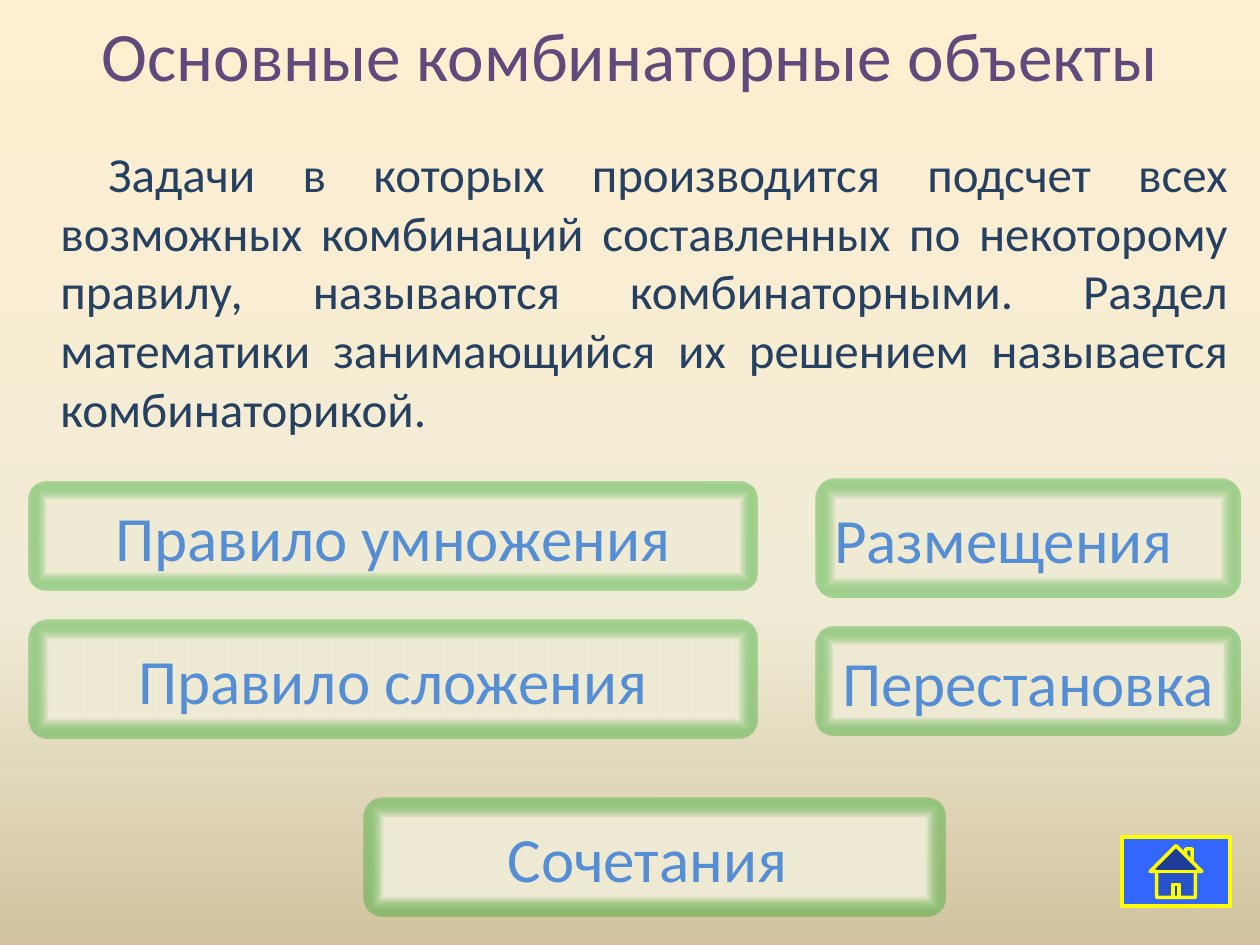
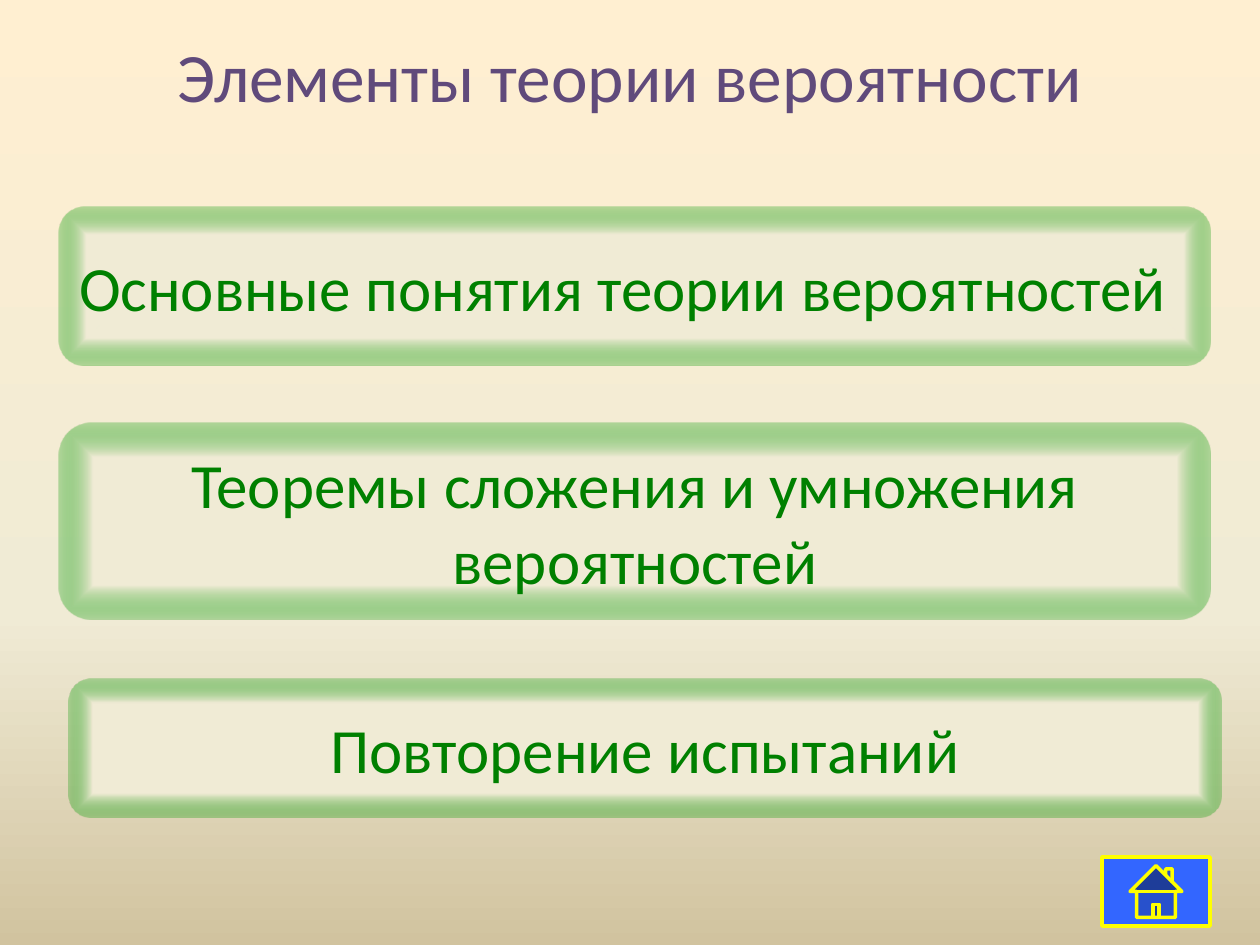
from pptx import Presentation
from pptx.dml.color import RGBColor
from pptx.enum.shapes import MSO_SHAPE
from pptx.enum.text import MSO_ANCHOR, PP_ALIGN
from pptx.oxml import parse_xml
from pptx.oxml.ns import nsdecls
from pptx.util import Emu, Pt

# Shared scale, font and colours
EMU_PER_PX = 914400 / 126
FONT = "Calibri"
TITLE_PURPLE = RGBColor(0x60, 0x4A, 0x7B)
BODY_NAVY = RGBColor(0x25, 0x40, 0x61)
LINK_BLUE = RGBColor(0x55, 0x8E, 0xD5)
LINK_GREEN = RGBColor(0x00, 0x80, 0x00)
HOME_BLUE = RGBColor(0x33, 0x66, 0xFF)
HOME_YELLOW = RGBColor(0xFF, 0xFF, 0x00)
CREAM = RGBColor(0xFF, 0xEF, 0xD1)
IVORY = RGBColor(0xF0, 0xEB, 0xD5)
SAND = RGBColor(0xD1, 0xC3, 0x9F)
RIM_GREEN = RGBColor(0x00, 0x99, 0x00)

# Gradients: (position %, colour, opacity %)
BACKDROP_STOPS = [(0, CREAM, 100), (65, IVORY, 100), (100, SAND, 100)]
BUTTON_STOPS = [(65, IVORY, 100), (100, RIM_GREEN, 27), (100, SAND, 100)]
DOWNWARD = '<a:lin ang="5400000" scaled="0"/>'
FROM_CENTRE = ('<a:path path="shape"><a:fillToRect l="50000" t="50000" '
               'r="50000" b="50000"/></a:path>')


def px(length):
    return Emu(round(length * EMU_PER_PX))


def paint_gradient(fill, element, stops, direction):
    """Replace the fill of an element by a gradient with any number of stops."""
    fill.background()
    empty_fill = element.xpath(".//a:noFill")[0]
    stop_xml = "".join(
        f'<a:gs pos="{position * 1000}"><a:srgbClr val="{colour}">'
        f'<a:alpha val="{opacity * 1000}"/></a:srgbClr></a:gs>'
        for position, colour, opacity in stops)
    gradient = parse_xml(f'<a:gradFill {nsdecls("a")} rotWithShape="1">'
                         f'<a:gsLst>{stop_xml}</a:gsLst>{direction}</a:gradFill>')
    empty_fill.getparent().replace(empty_fill, gradient)


def write(shape, text, size, colour, align, anchor=MSO_ANCHOR.MIDDLE):
    frame = shape.text_frame
    frame.word_wrap = True
    frame.vertical_anchor = anchor
    paragraph = frame.paragraphs[0]
    paragraph.text = text
    paragraph.alignment = align
    paragraph.font.name = FONT
    paragraph.font.size = Pt(size)
    paragraph.font.color.rgb = colour
    return frame


def add_slide(deck):
    slide = deck.slides.add_slide(deck.slide_layouts[6])
    paint_gradient(slide.background.fill, slide.element, BACKDROP_STOPS, DOWNWARD)
    return slide


def add_title(slide, text, top, height):
    title = slide.shapes.add_textbox(px(63), px(top), px(1134), px(height))
    return write(title, text, 39.6, TITLE_PURPLE, PP_ALIGN.CENTER)


def add_definition(slide, text, left, top, width, height):
    definition = slide.shapes.add_textbox(px(left), px(top), px(width), px(height))
    frame = write(definition, text, 28, BODY_NAVY, PP_ALIGN.JUSTIFY, MSO_ANCHOR.TOP)
    properties = frame.paragraphs[0]._p.get_or_add_pPr()
    properties.set("marL", str(px(48)))
    properties.set("indent", str(px(48)))


def add_button(slide, text, colour, left, top, width, height, align=PP_ALIGN.CENTER):
    button = slide.shapes.add_shape(MSO_SHAPE.ROUNDED_RECTANGLE,
                                    px(left), px(top), px(width), px(height))
    button.shadow.inherit = False
    paint_gradient(button.fill, button.element, BUTTON_STOPS, FROM_CENTRE)
    button.line.fill.background()
    write(button, text, 36, colour, align)


def add_home_button(slide, left, top):
    home = slide.shapes.add_shape(MSO_SHAPE.ACTION_BUTTON_HOME,
                                  px(left), px(top), px(108), px(69))
    home.shadow.inherit = False
    home.fill.solid()
    home.fill.fore_color.rgb = HOME_BLUE
    home.line.color.rgb = HOME_YELLOW
    home.line.width = Pt(2)


def build_combinatorics(deck):
    slide = add_slide(deck)
    add_title(slide, "Основные комбинаторные объекты", 0, 108)
    add_definition(
        slide,
        "Задачи в которых производится подсчет всех возможных комбинаций "
        "составленных по некоторому правилу, называются комбинаторными. "
        "Раздел математики занимающийся их решением называется комбинаторикой.",
        0, 137, 1240, 335)

    # Rules on the left, kinds of selection on the right
    rules, selections = (29, 728), (816, 424)
    for text, (left, width), top, height, align in [
        ("Правило умножения", rules, 482, 108, PP_ALIGN.CENTER),
        ("Правило сложения", rules, 620, 118, PP_ALIGN.CENTER),
        ("Размещения", selections, 479, 118, PP_ALIGN.LEFT),
        ("Перестановка", selections, 627, 108, PP_ALIGN.CENTER),
        ("Сочетания ", (364, 581), 798, 118, PP_ALIGN.CENTER),
    ]:
        add_button(slide, text, LINK_BLUE, left, top, width, height, align)
    add_home_button(slide, 1122, 837)


def build_probability(deck):
    slide = add_slide(deck)
    title = add_title(slide, "Элементы теории вероятности", 38, 158)
    # Keep the title in the upper half of its box
    title.margin_top, title.margin_bottom = 0, px(84)

    # Topics, one below the other
    for text, left, top, height, align in [
        ("Основные понятия теории вероятностей", 59, 207, 158, PP_ALIGN.LEFT),
        ("Теоремы сложения и умножения вероятностей", 59, 423, 197, PP_ALIGN.CENTER),
        ("Повторение испытаний", 69, 679, 138, PP_ALIGN.CENTER),
    ]:
        add_button(slide, text, LINK_GREEN, left, top, 1152, height, align)
    add_home_button(slide, 1102, 857)


def main():
    deck = Presentation()
    deck.slide_width, deck.slide_height = px(1260), px(945)
    build_combinatorics(deck)
    build_probability(deck)
    deck.save("out.pptx")


if __name__ == "__main__":
    main()
